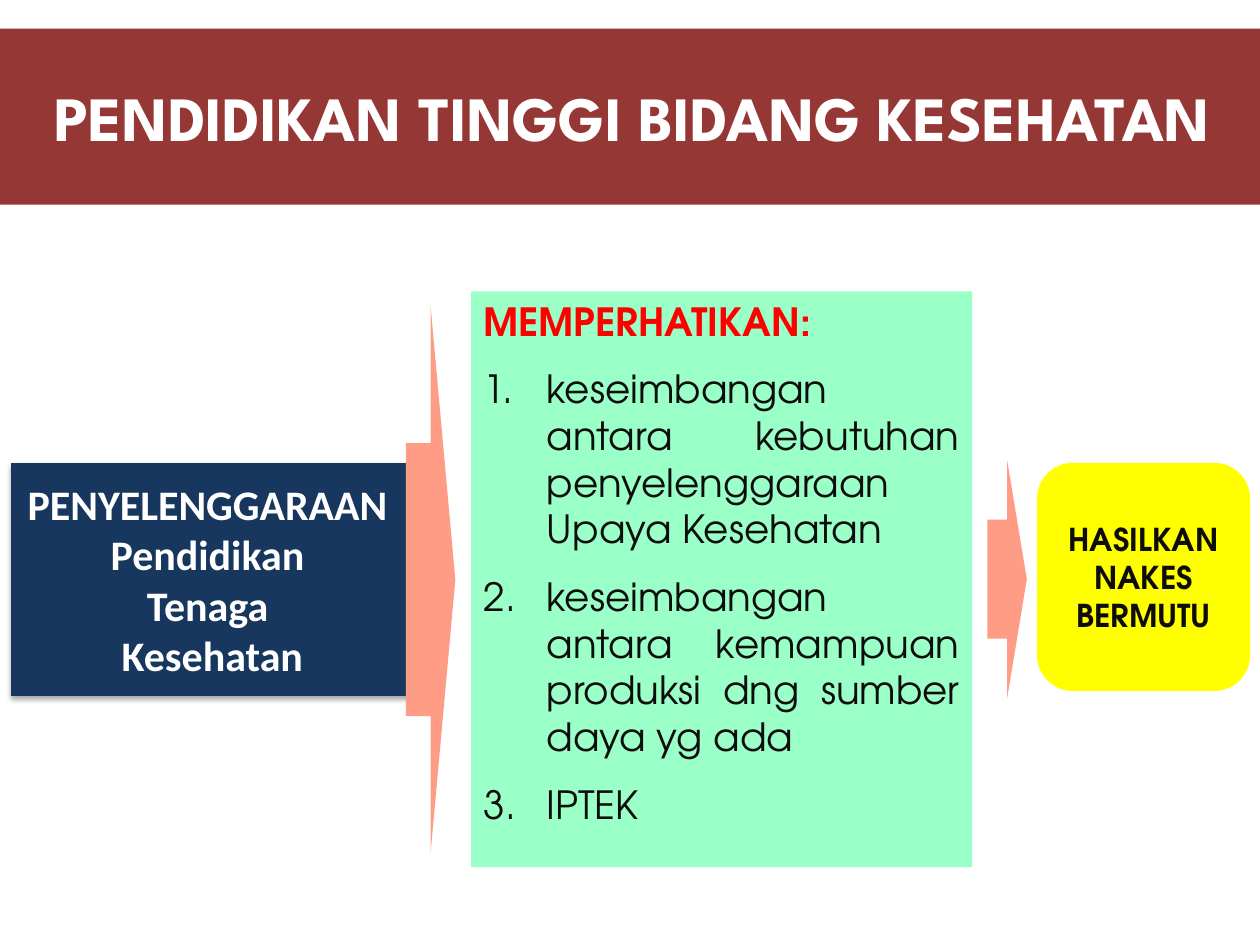
"""Build the slide on higher education in the health field."""
from dataclasses import dataclass

from lxml.etree import SubElement
from pptx import Presentation
from pptx.dml.color import RGBColor
from pptx.enum.shapes import MSO_SHAPE as Preset
from pptx.enum.text import MSO_ANCHOR as Anchor, PP_ALIGN as Align
from pptx.oxml.ns import qn
from pptx.shapes.autoshape import Shape
from pptx.slide import Slide
from pptx.util import Pt

MAROON = RGBColor(0x95, 0x37, 0x35)
NAVY = RGBColor(0x17, 0x37, 0x5E)
MINT = RGBColor(0x9B, 0xFF, 0xC8)
SALMON = RGBColor(0xFF, 0x9C, 0x85)
YELLOW = RGBColor(0xFF, 0xFF, 0x00)
RED = RGBColor(0xFF, 0x00, 0x00)
WHITE = RGBColor(0xFF, 0xFF, 0xFF)
INK = RGBColor(0x0D, 0x0D, 0x0D)
ADVENTOR = "TeX Gyre Adventor"


@dataclass(frozen=True)
class Style:
    font: str
    size: float
    color: RGBColor
    bold: bool = True


@dataclass(frozen=True)
class Block:
    preset: Preset
    left: float
    top: float
    width: float
    height: float
    fill: RGBColor
    lines: tuple[str, ...] = ()
    style: Style | None = None


HEADING = Style(ADVENTOR, 22.2, RED)
ITEM = Style(ADVENTOR, 22.2, INK, bold=False)
CONSIDERATIONS = (
    "MEMPERHATIKAN:",
    "keseimbangan antara kebutuhan penyelenggaraan Upaya Kesehatan",
    "keseimbangan antara kemampuan produksi dng sumber daya yg ada",
    "IPTEK",
)
CONSIDERATION_PANEL = Block(Preset.RECTANGLE, 269.3, 166.5, 286.3, 329, MINT)
PROVIDER = Block(
    Preset.FLOWCHART_PROCESS, 6.5, 264.5, 229.7, 133, NAVY,
    ("PENYELENGGARAAN ", "Pendidikan ", "Tenaga ", "Kesehatan"),
    Style("Calibri", 24, WHITE),
)
OTHER_BLOCKS = (
    Block(Preset.ROUNDED_RECTANGLE, 592.6, 264.5, 121.7, 130.3, YELLOW,
          ("HASILKAN", "NAKES", "BERMUTU"), Style(ADVENTOR, 18, INK)),
    Block(Preset.RIGHT_ARROW, 564.3, 263, 22.5, 136, SALMON),
    Block(Preset.RECTANGLE, 0, 16.3, 723, 100.6, MAROON,
          ("PENDIDIKAN TINGGI BIDANG KESEHATAN",), Style("League Spartan", 36, WHITE)),
    Block(Preset.RIGHT_ARROW, 232, 175.2, 28.2, 312, SALMON),
)


def write_lines(shape: Shape, lines: tuple[str, ...], styles: list[Style], align: Align) -> None:
    """Fill the shape with one styled paragraph per line."""
    frame = shape.text_frame
    frame.word_wrap = True
    frame.text = "\n".join(lines)
    for paragraph, style in zip(frame.paragraphs, styles):
        paragraph.alignment = align
        font = paragraph.font
        font.name, font.size, font.bold = style.font, Pt(style.size), style.bold
        font.color.rgb = style.color


def draw_block(slide: Slide, block: Block) -> Shape:
    """Draw a borderless filled shape with its centred lines."""
    shape = slide.shapes.add_shape(
        block.preset, Pt(block.left), Pt(block.top), Pt(block.width), Pt(block.height))
    shape.shadow.inherit = False
    shape.fill.solid()
    shape.fill.fore_color.rgb = block.fill
    shape.line.fill.background()
    if block.style:
        shape.text_frame.vertical_anchor = Anchor.MIDDLE
        write_lines(shape, block.lines, [block.style] * len(block.lines), Align.CENTER)
    return shape


def draw_considerations(slide: Slide) -> None:
    """Draw the panel with its heading and numbered items."""
    panel = draw_block(slide, CONSIDERATION_PANEL)
    panel.text_frame.vertical_anchor = Anchor.TOP
    styles = [HEADING] + [ITEM] * (len(CONSIDERATIONS) - 1)
    write_lines(panel, CONSIDERATIONS, styles, Align.JUSTIFY)
    for index, paragraph in enumerate(panel.text_frame.paragraphs):
        paragraph.space_after = Pt(12)
        properties = paragraph._p.get_or_add_pPr()
        properties.set("marL", str(Pt(36)))
        properties.set("indent", str(Pt(-36)))
        if index:
            numbering = properties.makeelement(qn("a:buAutoNum"), {"type": "arabicPeriod"})
            properties.find(qn("a:spcAft")).addnext(numbering)


def add_soft_shadow(shape: Shape) -> None:
    """Cast a soft shadow straight down from the shape."""
    effects = shape._element.spPr.find(qn("a:effectLst"))
    shadow = SubElement(effects, qn("a:outerShdw"), blurRad=str(Pt(3.1)),
                        dist=str(Pt(1.8)), dir="5400000", rotWithShape="0")
    tint = SubElement(shadow, qn("a:srgbClr"), val="000000")
    SubElement(tint, qn("a:alpha"), val="35000")


def main() -> None:
    """Build and save the presentation."""
    deck = Presentation()
    deck.slide_width, deck.slide_height = Pt(720), Pt(540)
    slide = deck.slides.add_slide(deck.slide_layouts[6])
    draw_considerations(slide)
    add_soft_shadow(draw_block(slide, PROVIDER))
    for block in OTHER_BLOCKS:
        draw_block(slide, block)
    deck.save("out.pptx")


if __name__ == "__main__":
    main()
